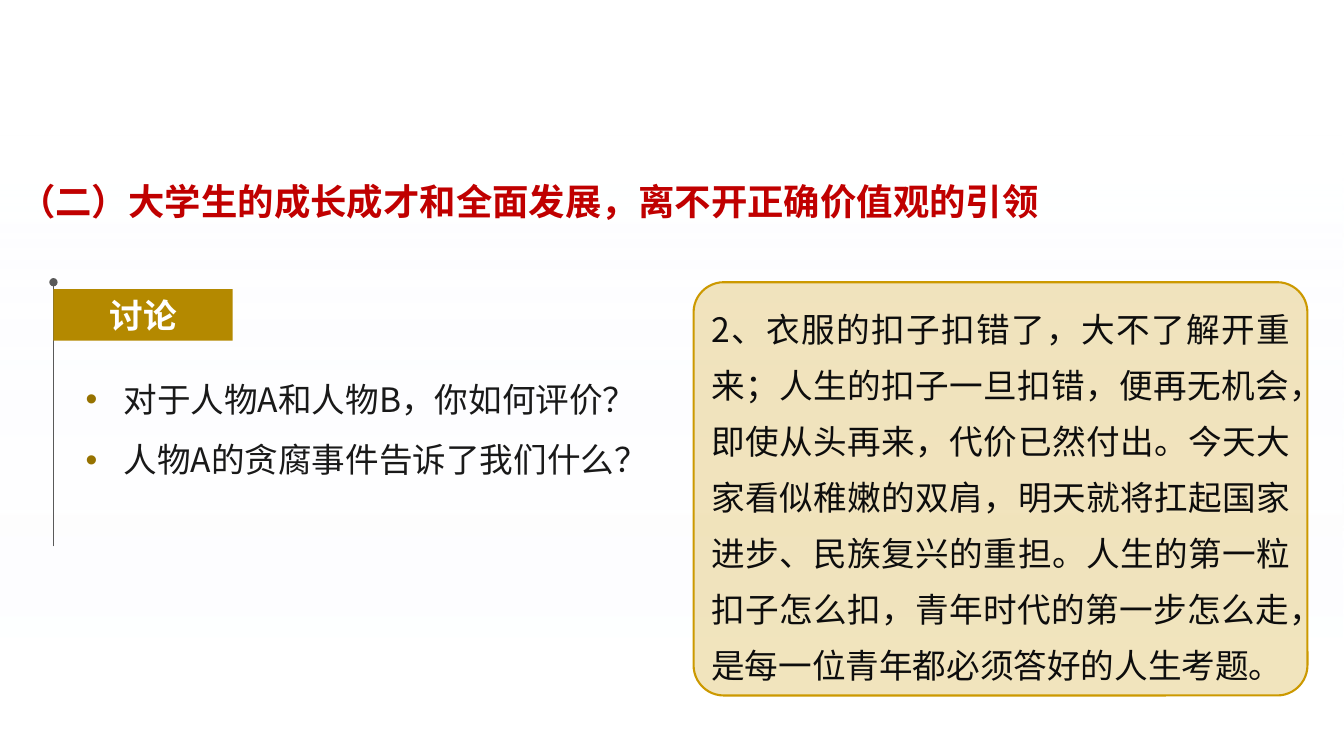
from lxml import etree
from pptx import Presentation
from pptx.dml.color import RGBColor
from pptx.enum.shapes import MSO_CONNECTOR, MSO_SHAPE
from pptx.enum.text import MSO_ANCHOR, PP_ALIGN
from pptx.oxml.ns import qn
from pptx.util import Pt

LEFT, CENTER, JUSTIFY = PP_ALIGN.LEFT, PP_ALIGN.CENTER, PP_ALIGN.JUSTIFY
TOP, MIDDLE = MSO_ANCHOR.TOP, MSO_ANCHOR.MIDDLE
RECTANGLE, ROUNDED = MSO_SHAPE.RECTANGLE, MSO_SHAPE.ROUNDED_RECTANGLE
STRAIGHT = MSO_CONNECTOR.STRAIGHT
CJK_FONT = "Noto Sans CJK SC"
GOLD, DARK_GOLD, BULLET_GOLD = "CC9900", "B48900", "967200"
RED, GREY, WHITE = "C00000", "595959", "FFFFFF"

TITLE = "（二）大学生的成长成才和全面发展，离不开正确价值观的引领"
QUESTIONS = ["对于人物A和人物B，你如何评价？", "人物A的贪腐事件告诉了我们什么？"]
MESSAGE = (
    "2、衣服的扣子扣错了，大不了解开重来；人生的扣子一旦扣错，便再无机会，"
    "即使从头再来，代价已然付出。今天大家看似稚嫩的双肩，明天就将扛起国家进步、"
    "民族复兴的重担。人生的第一粒扣子怎么扣，青年时代的第一步怎么走，"
    "是每一位青年都必须答好的人生考题。"
)


def color(value):
    return RGBColor.from_string(value)


def add_child(parent, tag, **values):
    child = etree.SubElement(parent, qn(tag))
    for name, value in values.items():
        child.set(name, value)
    return child


def set_alpha(fill_color, percent):
    add_child(fill_color, "a:alpha", val=str(percent * 1000))


def place(shape, box):
    for name, value in zip(("left", "top", "width", "height"), box):
        setattr(shape, name, Pt(value))


def add_box(page, kind, box):
    shape = page.shapes.add_shape(kind, *map(Pt, box))
    shape.shadow.inherit = False
    return shape


def write(shape, lines, size, ink, font=CJK_FONT, bold=False, anchor=TOP,
          bullet=None, wrap=True, **layout):
    """Fill a shape with paragraphs; layout holds paragraph attributes."""
    frame = shape.text_frame
    frame.word_wrap = wrap
    frame.vertical_anchor = anchor
    for index, line in enumerate(lines):
        para = frame.add_paragraph() if index else frame.paragraphs[0]
        for name, value in {"space_before": Pt(0), **layout}.items():
            setattr(para, name, value)
        if bullet:
            add_bullet(para, bullet)
        span = para.add_run()
        span.text = line
        for name, value in {"size": Pt(size), "bold": bold, "name": font}.items():
            setattr(span.font, name, value)
        span.font.color.rgb = color(ink)
        add_child(span.font._element, "a:ea", typeface=CJK_FONT)


def add_bullet(para, ink):
    properties = para._p.get_or_add_pPr()
    properties.set("marL", str(Pt(27)))
    properties.set("indent", str(Pt(-27)))
    add_child(add_child(properties, "a:buClr"), "a:srgbClr", val=ink)
    add_child(properties, "a:buFont", typeface="Arial")
    add_child(properties, "a:buChar", char="•")


def draw_backdrop(page, box):
    """Faint vertical gradient behind everything else."""
    backdrop = add_box(page, RECTANGLE, box)
    backdrop.line.fill.background()
    backdrop.fill.gradient()
    backdrop.fill.gradient_angle = 270
    stops = [("F7FAFD", 0, 0), (WHITE, 0.86, 70)]
    for stop, (ink, position, _) in zip(backdrop.fill.gradient_stops, stops):
        stop.color.rgb = color(ink)
        stop.position = position
    for element, (_, _, percent) in zip(backdrop._element.iter(qn("a:srgbClr")), stops):
        set_alpha(element, percent)
    page.shapes._spTree.insert(2, backdrop._element)


def draw_title(page, box):
    title = page.shapes.title
    place(title, box)
    write(title, [TITLE], 26, RED, bold=True, alignment=LEFT)


def draw_discussion(page, box):
    """Dotted rail with a label and the questions beside it."""
    left, top, width, height = box
    rail = page.shapes.add_connector(
        STRAIGHT, Pt(left), Pt(top + height), Pt(left), Pt(top))
    rail.line.color.rgb = color(GREY)
    rail.line.width = Pt(1)
    add_child(rail.line._get_or_add_ln(), "a:tailEnd", type="oval")
    add_child(rail._element.spPr, "a:effectLst")

    label = add_box(page, RECTANGLE, (left, top + 5, 128, 36.7))
    label.fill.solid()
    label.fill.fore_color.rgb = color(DARK_GOLD)
    label.line.fill.background()
    write(label, ["讨论"], 24, WHITE, font="Arial", bold=True, anchor=MIDDLE,
          wrap=False, alignment=CENTER)

    questions = page.placeholders[1]
    place(questions, (left + 15.8, top + 51, width - 15.8, 94.5))
    write(questions, QUESTIONS, 24, "191919", bullet=BULLET_GOLD,
          alignment=JUSTIFY, line_spacing=1.5)


def draw_message(page, box):
    left, top, width, height = box
    panel = add_box(page, ROUNDED, box)
    panel.adjustments[0] = 0.073
    panel.fill.solid()
    panel.fill.fore_color.rgb = color(GOLD)
    set_alpha(next(panel._element.spPr.iter(qn("a:srgbClr"))), 26)
    panel.line.color.rgb = color(GOLD)
    panel.line.width = Pt(1.5)
    text_box = (left + 5.6, top + 4.4, width - 10.8, height - 9.4)
    message = page.shapes.add_textbox(*map(Pt, text_box))
    write(message, [MESSAGE], 24, "0D0D0D", alignment=JUSTIFY, line_spacing=Pt(40))


def main():
    deck = Presentation()
    deck.slide_width, deck.slide_height = Pt(960), Pt(540)
    page = deck.slides.add_slide(deck.slide_layouts[1])
    draw_backdrop(page, (0, 96, 960, 444))
    draw_message(page, (495.4, 201.6, 438.5, 295.2))
    draw_title(page, (6.5, 124.6, 802, 39))
    draw_discussion(page, (38.2, 201.6, 467.2, 188.6))
    deck.save("out.pptx")


if __name__ == "__main__":
    main()
